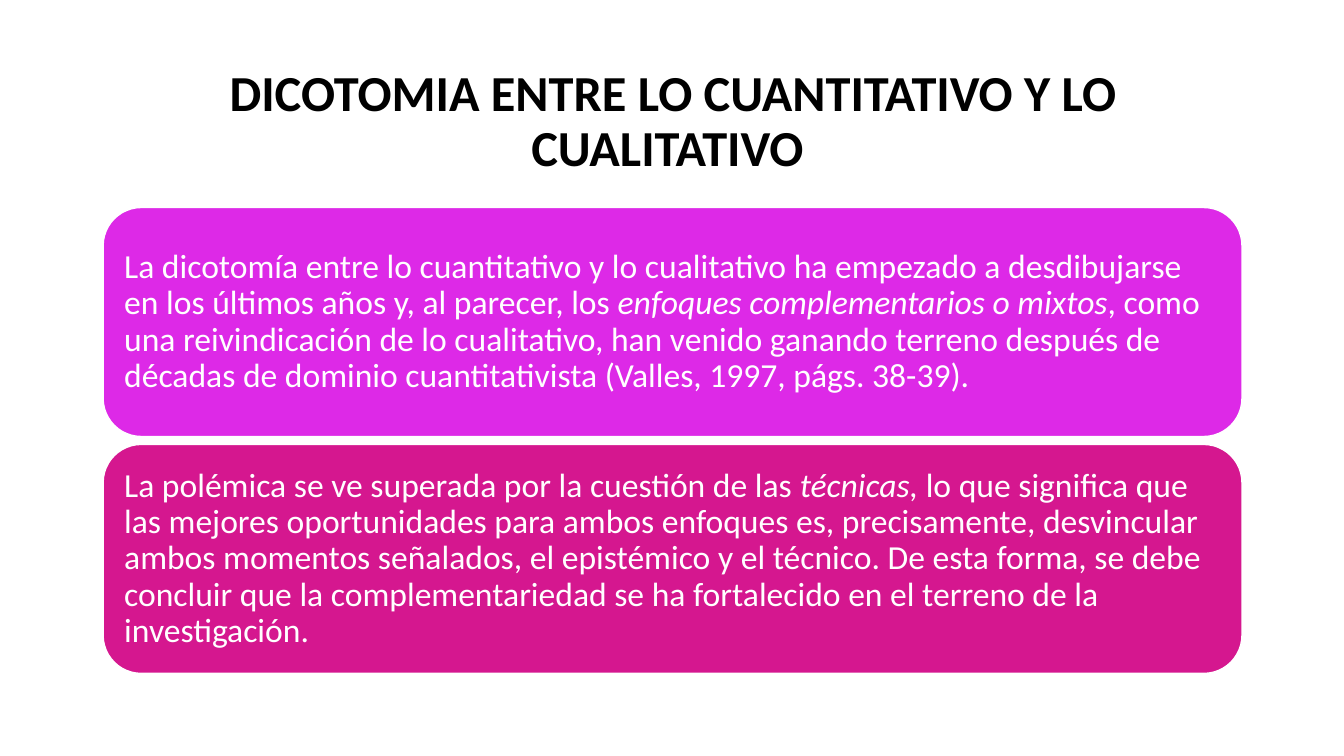
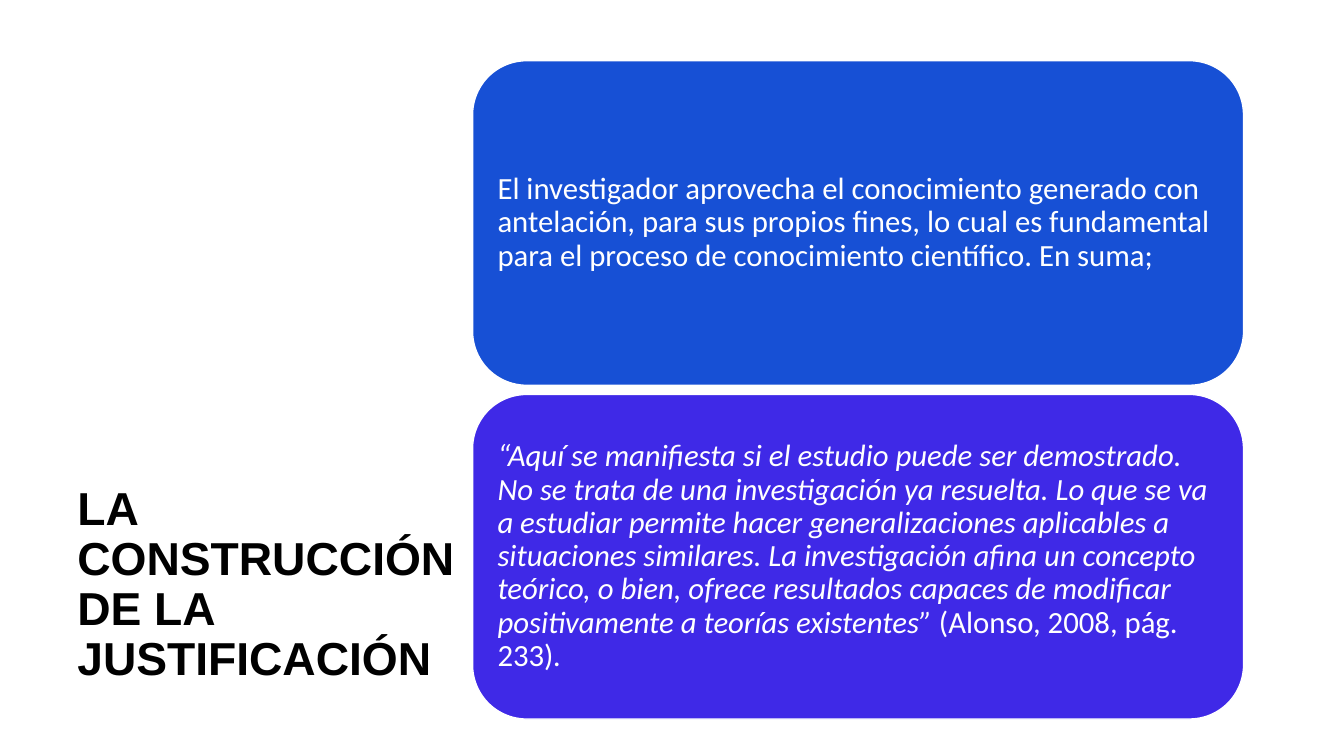
from dataclasses import dataclass

import pptx
import pptx.dml.color
import pptx.enum.shapes
import pptx.enum.text
import pptx.util

Cm = pptx.util.Cm
Pt = pptx.util.Pt
RGBColor = pptx.dml.color.RGBColor
Align = pptx.enum.text.PP_ALIGN
Anchor = pptx.enum.text.MSO_ANCHOR

BLACK = RGBColor(0x00, 0x00, 0x00)
WHITE = RGBColor(0xFF, 0xFF, 0xFF)
VIOLET = RGBColor(0xDD, 0x29, 0xE7)
PINK = RGBColor(0xD5, 0x17, 0x8F)
BLUE = RGBColor(0x17, 0x50, 0xD5)
INDIGO = RGBColor(0x3F, 0x29, 0xE7)


@dataclass(frozen=True)
class Area:
    left: float
    top: float
    width: float
    height: float

    def lengths(self) -> tuple:
        return Cm(self.left), Cm(self.top), Cm(self.width), Cm(self.height)


@dataclass(frozen=True)
class Span:
    text: str
    slant: bool = False


@dataclass(frozen=True)
class Title:
    text: str
    area: Area
    face: str
    size: int
    align: Align
    anchor: Anchor


@dataclass(frozen=True)
class Card:
    fill: RGBColor
    spans: tuple[Span, ...]


@dataclass(frozen=True)
class Stack:
    first: Area
    gap: float
    inset: float
    size: int
    cards: tuple[Card, ...]


@dataclass(frozen=True)
class Page:
    title: Title
    stack: Stack


PAGES = (
    Page(
        Title("DICOTOMIA ENTRE LO CUANTITATIVO Y LO CUALITATIVO ",
              Area(4.24, 1.52, 25.45, 3.15), "Calibri", 36,
              Align.CENTER, Anchor.MIDDLE),
        Stack(Area(2.6, 5.23, 28.7, 5.77), 0.2, 0.25, 24, (
            Card(VIOLET, (
                Span("La dicotomía entre lo cuantitativo y lo cualitativo ha empezado a "
                     "desdibujarse en los últimos años y, al parecer, los "),
                Span("enfoques complementarios o mixtos", True),
                Span(", como una reivindicación de lo cualitativo, han venido ganando "
                     "terreno después de décadas de dominio cuantitativista "
                     "(Valles, 1997, págs. 38-39)."),
            )),
            Card(PINK, (
                Span("La polémica se ve superada por la cuestión de las "),
                Span("técnicas, ", True),
                Span("lo que significa que las mejores oportunidades para ambos enfoques "
                     "es, precisamente, desvincular ambos momentos señalados, el "
                     "epistémico y el técnico. De esta forma, se debe concluir que la "
                     "complementariedad se ha fortalecido en el terreno de la "
                     "investigación."),
            )),
        )),
    ),
    Page(
        Title("LA CONSTRUCCIÓN DE LA JUSTIFICACIÓN",
              Area(1.7, 1.52, 10.82, 15.88), "Arial", 33,
              Align.LEFT, Anchor.BOTTOM),
        Stack(Area(11.91, 1.53, 19.43, 8.18), 0.23, 0.23, 22, (
            Card(BLUE, (
                Span("El investigador aprovecha el conocimiento generado con antelación, "
                     "para sus propios fines, lo cual es fundamental para el proceso de "
                     "conocimiento científico. En suma;"),
            )),
            Card(INDIGO, (
                Span("“Aquí se manifiesta si el estudio puede ser demostrado. No se trata "
                     "de una investigación ya resuelta. Lo que se va a estudiar permite "
                     "hacer generalizaciones aplicables a situaciones similares. La "
                     "investigación afina un concepto teórico, o bien, ofrece resultados "
                     "capaces de modificar positivamente a teorías existentes” ", True),
                Span("(Alonso, 2008, pág. 233)"),
                Span(".", True),
            )),
        )),
    ),
)


def write(shape, spans: tuple[Span, ...], face: str, size: int, color: RGBColor,
          align: Align, anchor: Anchor, bold: bool = False) -> None:
    frame = shape.text_frame
    frame.word_wrap = True
    frame.vertical_anchor = anchor
    para = frame.paragraphs[0]
    para.alignment = align
    para.line_spacing = 0.9
    font = para.font
    font.name = face
    font.size = Pt(size)
    font.bold = bold
    font.color.rgb = color
    for span in spans:
        run = para.add_run()
        run.text = span.text
        if span.slant:
            run.font.italic = True


def draw_title(slide, title: Title) -> None:
    box = slide.shapes.add_textbox(*title.area.lengths())
    write(box, (Span(title.text),), title.face, title.size, BLACK,
          title.align, title.anchor, True)


def draw_stack(slide, stack: Stack) -> None:
    first = stack.first
    for row, card in enumerate(stack.cards):
        top = first.top + row * (first.height + stack.gap)
        area = Area(first.left, top, first.width, first.height)
        shape = slide.shapes.add_shape(
            pptx.enum.shapes.MSO_SHAPE.ROUNDED_RECTANGLE, *area.lengths())
        shape.shadow.inherit = False
        shape.fill.solid()
        shape.fill.fore_color.rgb = card.fill
        shape.line.color.rgb = WHITE
        shape.line.width = Pt(1)
        frame = shape.text_frame
        frame.margin_left = frame.margin_right = Cm(stack.inset)
        frame.margin_top = frame.margin_bottom = Cm(stack.inset)
        write(shape, card.spans, "Calibri", stack.size, WHITE,
              Align.LEFT, Anchor.MIDDLE)


def main() -> None:
    deck = pptx.Presentation()
    deck.slide_width = Cm(33.87)
    deck.slide_height = Cm(19.05)
    blank = deck.slide_layouts[6]
    for page in PAGES:
        slide = deck.slides.add_slide(blank)
        draw_title(slide, page.title)
        draw_stack(slide, page.stack)
    deck.save("out.pptx")


if __name__ == "__main__":
    main()
